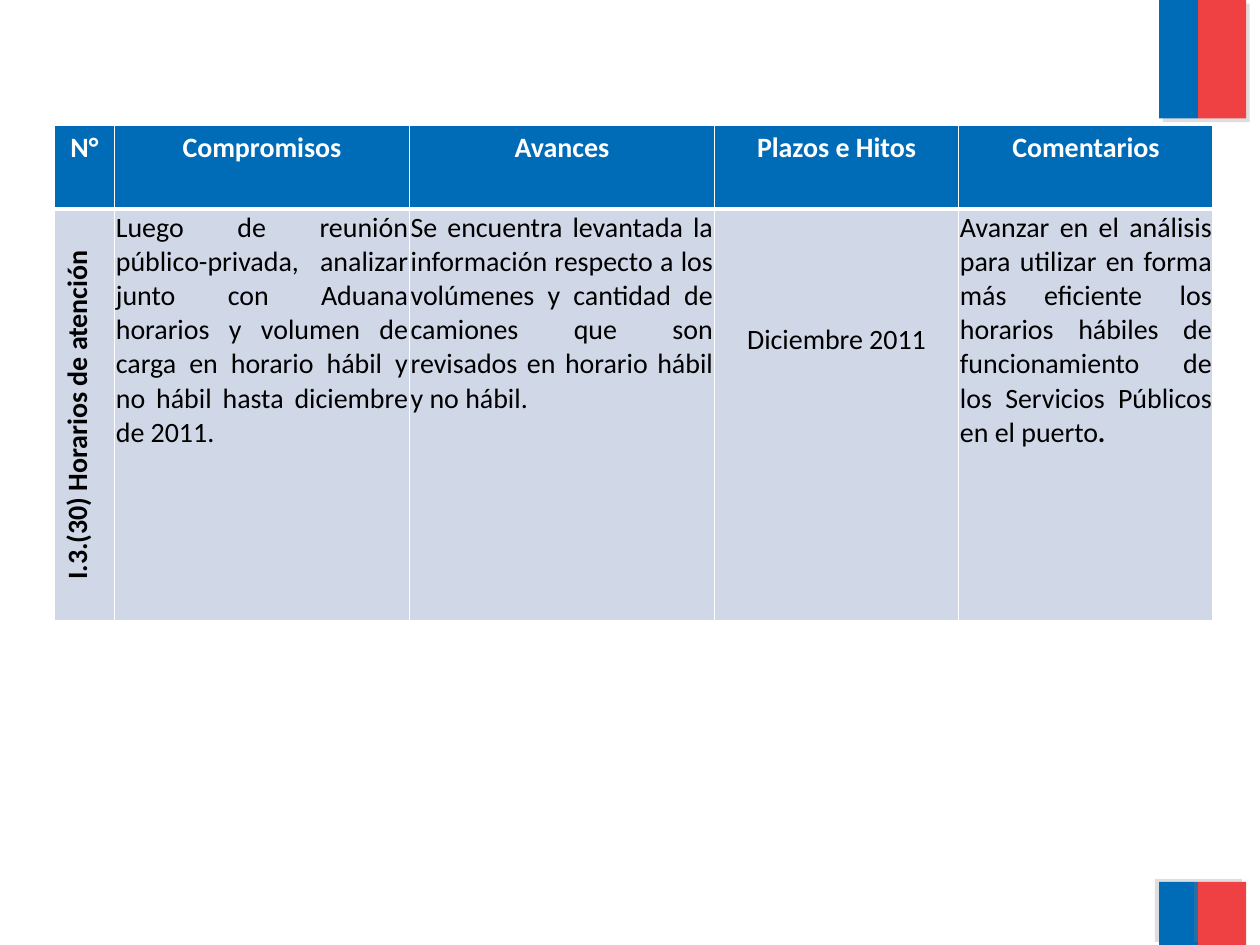
from lxml import etree
from pptx import Presentation
from pptx.dml.color import RGBColor
from pptx.enum import shapes, text
from pptx.oxml.ns import qn
from pptx.util import Inches, Pt

COLORS = {"blue": "006CB7", "red": "EF4144", "body": "D0D8E8",
          "white": "FFFFFF", "black": "000000", "shadow": "808080"}
CENTER, JUSTIFY = text.PP_ALIGN.CENTER, text.PP_ALIGN.JUSTIFY


def add_shadow(sp, angle):
    sp.shadow.inherit = False
    effects = sp._element.spPr.find(qn("a:effectLst"))
    shadow = etree.SubElement(effects, qn("a:outerShdw"), blurRad="0",
                              dist=str(Pt(3)), dir=str(angle * 60000),
                              algn="ctr", rotWithShape="0")
    color = etree.SubElement(shadow, qn("a:srgbClr"), val=COLORS["shadow"])
    etree.SubElement(color, qn("a:alpha"), val="25000")


def add_border(cell, side, width):
    line = etree.SubElement(cell._tc.get_or_add_tcPr(), qn("a:ln" + side),
                            w=str(Pt(width)))
    fill = etree.SubElement(line, qn("a:solidFill"))
    etree.SubElement(fill, qn("a:srgbClr"), val=COLORS["white"])


prs = Presentation()
prs.slide_width, prs.slide_height = Inches(10), Inches(7.5)
s = prs.slides.add_slide(prs.slide_layouts[6])

# Two-colour bars in the right corners
for top, height, angle in [(0, 0.94, 45), (7, 0.5, 215)]:
    for left, width, color in [(9.2, 0.31, "blue"), (9.51, 0.38, "red")]:
        sp = s.shapes.add_shape(shapes.MSO_SHAPE.RECTANGLE, Inches(left),
                                Inches(top), Inches(width), Inches(height))
        sp.fill.solid()
        sp.fill.fore_color.rgb = RGBColor.from_string(COLORS[color])
        sp.line.fill.background()
        add_shadow(sp, angle)

# Commitments table
headers = ["N°", "Compromisos", "Avances", "Plazos e Hitos", "Comentarios"]
commitment = [
    "I.3.(30) Horarios de atención",
    "Luego de reunión público-privada, analizar junto con Aduana horarios y "
    "volumen de carga en horario hábil y no hábil hasta diciembre de 2011.",
    "Se encuentra levantada la información respecto a los volúmenes y cantidad "
    "de camiones que son revisados en horario hábil y no hábil.",
    "Diciembre 2011",
    "Avanzar en el análisis para utilizar en forma más eficiente los horarios "
    "hábiles de funcionamiento de los Servicios Públicos en el puerto",
]
col_widths = [0.48, 2.34, 2.42, 1.94, 2.02]
row_heights = [0.67, 3.27]
table = s.shapes.add_table(2, 5, Inches(0.43), Inches(0.99),
                           Inches(sum(col_widths)), Inches(sum(row_heights))).table
for col, width in zip(table.columns, col_widths):
    col.width = Inches(width)
for row, height in zip(table.rows, row_heights):
    row.height = Inches(height)

for i, row_texts in enumerate([headers, commitment]):
    is_header = i == 0
    for j, cell_text in enumerate(row_texts):
        cell = table.cell(i, j)
        borders = {"L": 1, "R": 1, "T": 1 if is_header else 3, "B": 3 if is_header else 1}
        for side, width in borders.items():
            add_border(cell, side, width)
        cell.fill.solid()
        cell.fill.fore_color.rgb = RGBColor.from_string(
            COLORS["blue" if is_header else "body"])
        if not is_header and j > 0:
            cell.margin_left = cell.margin_right = cell.margin_top = Inches(0.01)
            cell.margin_bottom = 0
        tf = cell.text_frame
        tf.text = cell_text
        p = tf.paragraphs[0]
        p.alignment = CENTER if is_header or j in (0, 3) else JUSTIFY
        r = p.runs[0]
        r.font.name, r.font.size = "Calibri", Pt(16)
        r.font.bold = is_header or j == 0
        r.font.color.rgb = RGBColor.from_string(
            COLORS["white" if is_header else "black"])

# Rotated row label, lowered date and emphasised full stop
table.cell(1, 0)._tc.get_or_add_tcPr().set("vert", "vert270")
table.cell(1, 3).margin_top = Inches(0.9)
r = table.cell(1, 4).text_frame.paragraphs[0].add_run()
r.text = "."
r.font.name, r.font.size = "Calibri", Pt(16)
r.font.bold = r.font.italic = True
r.font.color.rgb = RGBColor.from_string(COLORS["black"])

prs.save("out.pptx")
